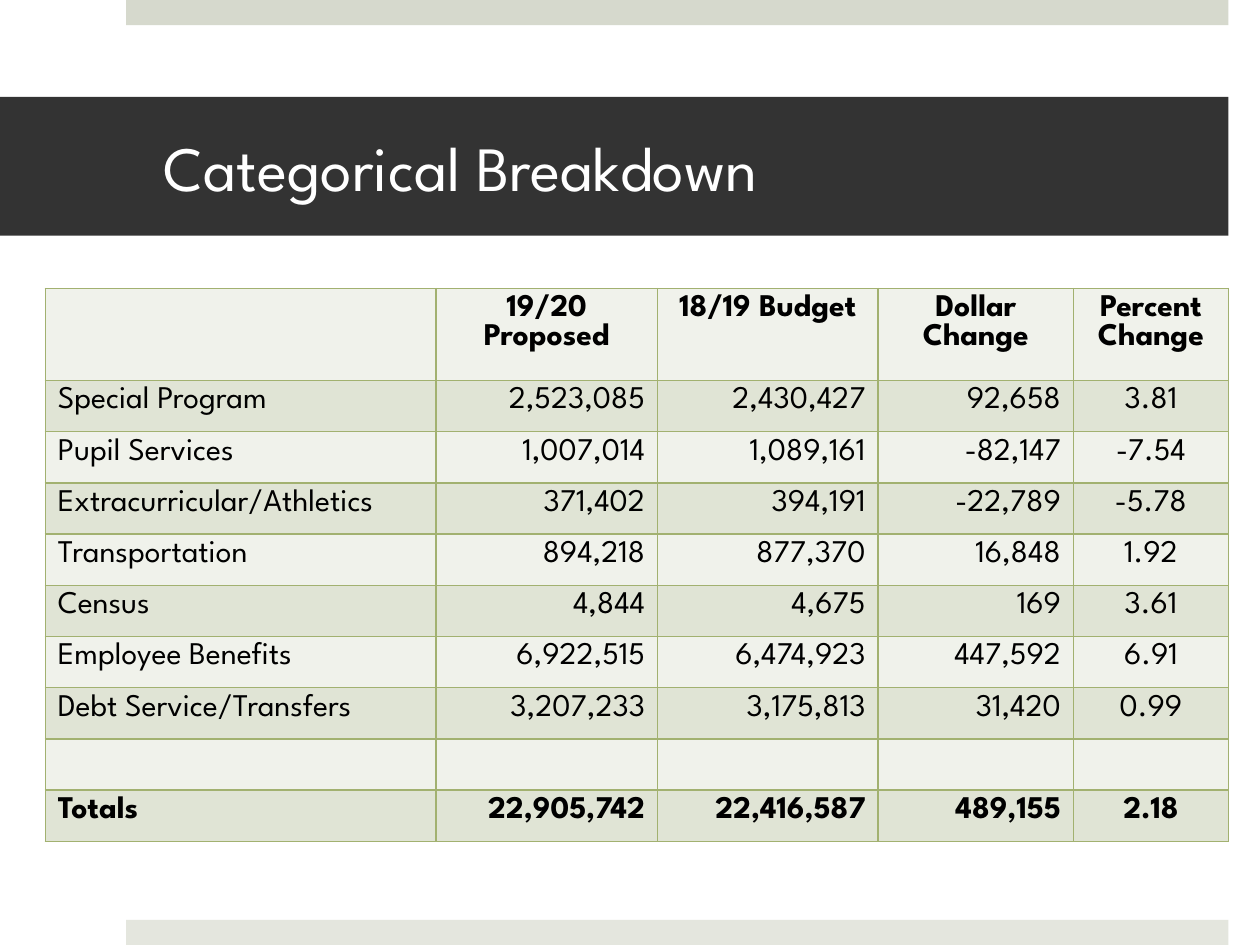
"""Build the Categorical Breakdown budget slide on a grid of 1000 columns by 750 rows."""
from lxml import etree
from pptx import Presentation
from pptx import util as u
from pptx.dml.color import RGBColor
from pptx.enum import shapes, text
from pptx.oxml import ns

DARK = RGBColor(0x33, 0x33, 0x33)
WHITE = RGBColor(0xFF, 0xFF, 0xFF)
BLACK = RGBColor(0, 0, 0)
SAGE = RGBColor(0xD6, 0xD9, 0xCD)
MIST = RGBColor(0xE4, 0xE6, 0xDE)
LINE = RGBColor(0xA2, 0xB1, 0x70)
BANDS = [RGBColor(0xF0, 0xF2, 0xEB), RGBColor(0xE0, 0xE4, 0xD5)]

deck = Presentation()
deck.slide_width, deck.slide_height = u.Inches(10), u.Inches(7.5)
col, row = deck.slide_width // 1000, deck.slide_height // 750
slide = deck.slides.add_slide(deck.slide_layouts[6])


def bar(x, y, w, h, tint):
    box = slide.shapes.add_shape(
        shapes.MSO_SHAPE.RECTANGLE, x * col, y * row, w * col, h * row)
    box.shadow.inherit = False
    box.fill.solid()
    box.fill.fore_color.rgb = tint
    box.line.fill.background()
    return box


def write(par, words, size, tint, bold, align):
    par.alignment = align
    run = par.add_run()
    run.text = words
    form = {"name": "League Spartan", "size": u.Pt(size), "bold": bold}
    for key, val in form.items():
        setattr(run.font, key, val)
    run.font.color.rgb = tint


bar(100, 0, 875, 20, SAGE)
bar(100, 730, 875, 20, MIST)
frame = bar(0, 77, 975, 110, DARK).text_frame
inset = {"margin_left": 130 * col, "margin_right": 30 * col,
         "margin_top": 5 * row, "margin_bottom": 5 * row,
         "vertical_anchor": text.MSO_ANCHOR.MIDDLE, "word_wrap": True}
for key, val in inset.items():
    setattr(frame, key, val)
write(frame.paragraphs[0], "Categorical Breakdown", 36, WHITE, False, text.PP_ALIGN.LEFT)

data = [
    ["", "19/20 Proposed", "18/19 Budget", "Dollar Change", "Percent Change"],
    ["Special Program", "2,523,085", "2,430,427", "92,658", "3.81"],
    ["Pupil Services", "1,007,014", "1,089,161", "-82,147", "-7.54"],
    ["Extracurricular/Athletics", "371,402", "394,191", "-22,789", "-5.78"],
    ["Transportation", "894,218", "877,370", "16,848", "1.92"],
    ["Census", "4,844", "4,675", "169", "3.61"],
    ["Employee Benefits", "6,922,515", "6,474,923", "447,592", "6.91"],
    ["Debt Service/Transfers", "3,207,233", "3,175,813", "31,420", "0.99"],
    [""] * 5,
    ["Totals", "22,905,742", "22,416,587", "489,155", "2.18"],
]
widths = [310, 176, 175, 155, 123]
left, right, mid = text.PP_ALIGN.LEFT, text.PP_ALIGN.RIGHT, text.PP_ALIGN.CENTER
aligns = [left, right, right, right, mid]
head, full = 73, 439
last = len(data) - 1

grid = slide.shapes.add_table(
    len(data), len(widths), 36 * col, 229 * row, sum(widths) * col, full * row).table
for c, wide in enumerate(widths):
    grid.columns[c].width = wide * col
for r, vals in enumerate(data):
    grid.rows[r].height = (full - head) * row // last if r else head * row
    for c, words in enumerate(vals):
        cell = grid.cell(r, c)
        props = cell._tc.get_or_add_tcPr()
        for side in ("lnL", "lnR", "lnT", "lnB"):
            edge = etree.SubElement(props, ns.qn("a:" + side), w=str(u.Pt(1)))
            fill = etree.SubElement(edge, ns.qn("a:solidFill"))
            etree.SubElement(fill, ns.qn("a:srgbClr"), val=str(LINE))
        cell.fill.solid()
        cell.fill.fore_color.rgb = BANDS[r % 2]
        if words:
            write(cell.text_frame.paragraphs[0], words, 18, BLACK,
                  r in (0, last), aligns[c] if r else mid)

deck.save("out.pptx")
